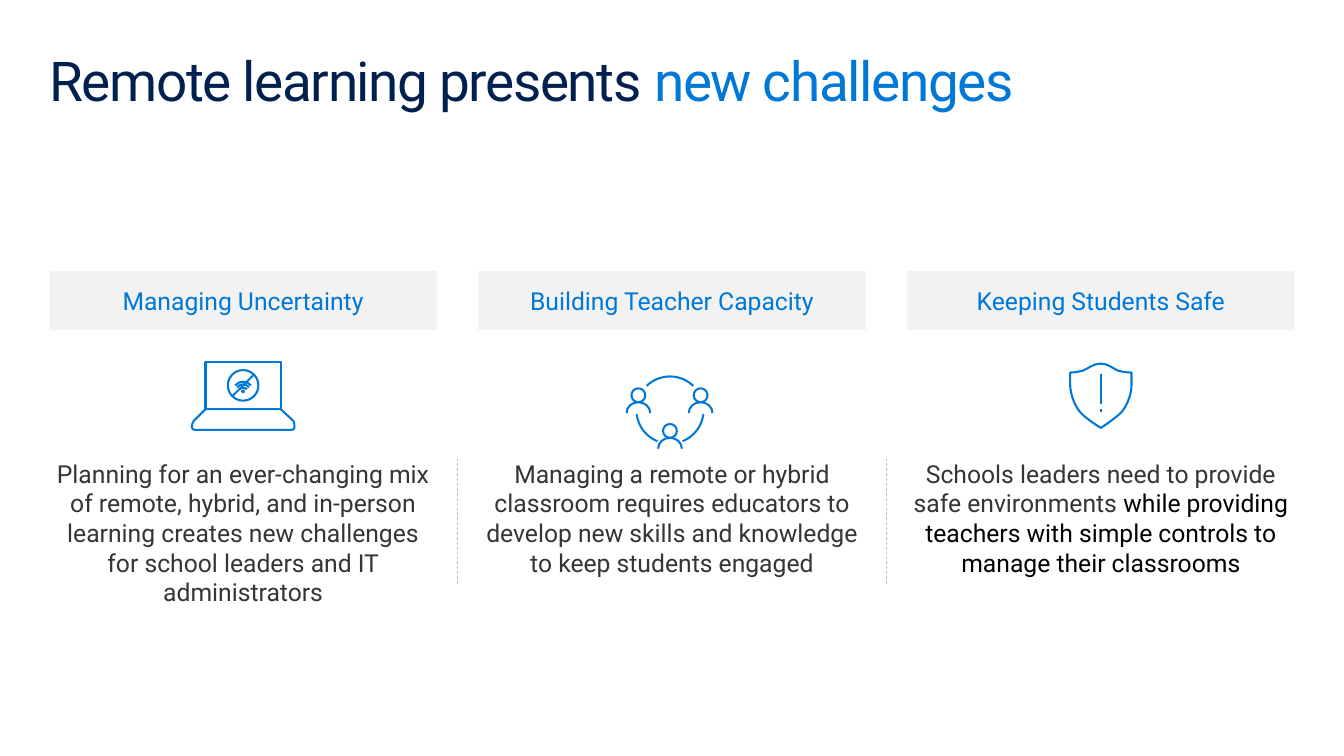
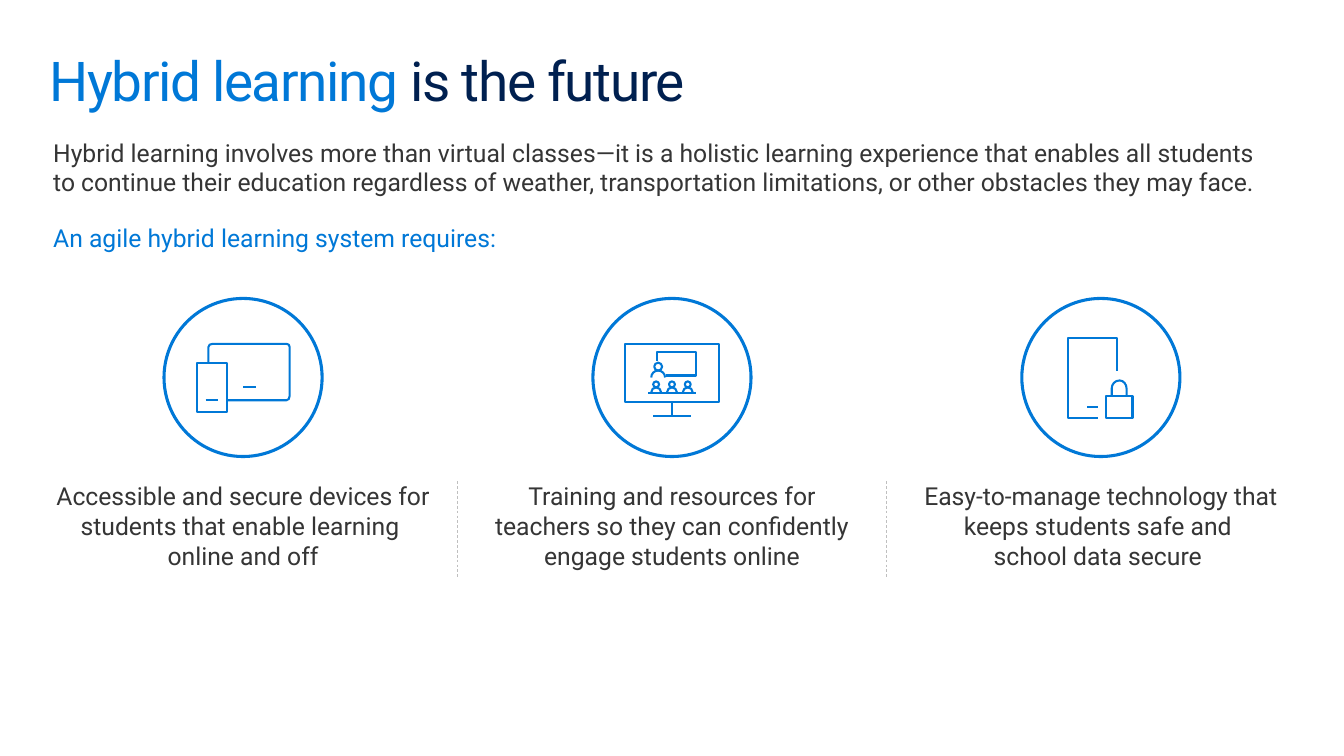
from dataclasses import dataclass
from itertools import islice
from math import cos, radians, sin, tan
from typing import Any

from lxml.etree import SubElement
from pptx import Presentation
from pptx.dml.color import RGBColor
from pptx.enum.dml import MSO_LINE
from pptx.enum.shapes import MSO_CONNECTOR, MSO_SHAPE
from pptx.enum.text import MSO_ANCHOR, PP_ALIGN
from pptx.oxml.ns import qn
from pptx.shapes.base import BaseShape
from pptx.slide import Slide
from pptx.text.text import TextFrame
from pptx.util import Inches, Pt

COLORS = {
    "navy": "002050",
    "blue": "0078D7",
    "text": "353535",
    "black": "000000",
    "band": "F2F2F2",
    "divider": "BFBFBF",
}
FONT = "Roboto"
LEFT, FULL_WIDTH = 0.5, 12.6
COLUMN_COUNT, COLUMN_WIDTH, COLUMN_GAP = 3, 3.92, 0.42
COLUMNS = [LEFT + i * (COLUMN_WIDTH + COLUMN_GAP) for i in range(COLUMN_COUNT)]
CENTERS = [left + COLUMN_WIDTH / 2 for left in COLUMNS]

NO_INSET = {"margin_left": 0, "margin_top": 0, "margin_right": 0, "margin_bottom": 0}
TITLE_PARAGRAPH = {"line_spacing": 0.9}
CENTERED = {"alignment": PP_ALIGN.CENTER}
CENTERED_SPACED = {"alignment": PP_ALIGN.CENTER, "space_after": Pt(6)}

Point = tuple[float, float]
Segment = tuple[float, ...]


@dataclass(frozen=True)
class Span:
    text: str
    color: str = "text"
    break_after: bool = False


@dataclass(frozen=True)
class Challenge:
    heading: str
    description: list[Span]


@dataclass(frozen=True)
class Stroke:
    segments: list[Segment]
    closed: bool = False


@dataclass(frozen=True)
class Person:
    x: float
    y: float
    head: float
    shoulder_width: float
    shoulder_height: float


CHALLENGES = [
    Challenge("Managing Uncertainty", [Span(
        "Planning for an ever-changing mix of remote, hybrid, and in-person learning "
        "creates new challenges for school leaders and IT administrators")]),
    Challenge("Building Teacher Capacity", [Span(
        "Managing a remote or hybrid classroom requires educators to develop new skills "
        "and knowledge to keep students engaged")]),
    Challenge("Keeping Students Safe", [
        Span("Schools leaders need to provide safe environments "),
        Span("while providing teachers with simple controls to manage their classrooms", "black")]),
]
REQUIREMENTS = [
    [Span("Accessible and secure devices for students that enable learning ", break_after=True),
     Span("online and off")],
    [Span("Training and resources for teachers so they can confidently engage students online")],
    [Span("Easy-to-manage technology that keeps students safe and ", break_after=True),
     Span("school data secure ")],
]
TEAM = [Person(x, y, 0.07, 0.12, 0.11) for x, y in [(6.46, 4.0), (7.09, 4.0), (6.78, 4.36)]]
TEACHER = Person(6.66, 3.71, 0.04, 0.07, 0.07)
STUDENTS = [Person(6.64 + 0.16 * i, 3.89, 0.03, 0.05, 0.05) for i in range(3)]


def apply_format(target: Any, values: dict[str, Any]) -> None:
    for name, value in values.items():
        setattr(target, name, value)


def rgb(color: str) -> RGBColor:
    return RGBColor.from_string(COLORS[color])


def write(frame: TextFrame, spans: list[Span], paragraph_format: dict[str, Any],
          size: float = 18, spacing: int = 0) -> None:
    frame.word_wrap = True
    paragraph = frame.paragraphs[0]
    apply_format(paragraph, paragraph_format)
    for span in spans:
        run = paragraph.add_run()
        run.text = span.text
        apply_format(run.font, {"name": FONT, "size": Pt(size)})
        run.font.color.rgb = rgb(span.color)
        if spacing:
            run.font._element.set("spc", str(spacing))
        if span.break_after:
            paragraph.add_line_break()


def add_text(slide: Slide, left: float, top: float, width: float, height: float,
             spans: list[Span], paragraph_format: dict[str, Any],
             frame_format: dict[str, Any], size: float = 18, spacing: int = 0) -> None:
    box = slide.shapes.add_textbox(Inches(left), Inches(top), Inches(width), Inches(height))
    apply_format(box.text_frame, frame_format)
    write(box.text_frame, spans, paragraph_format, size, spacing)


def add_title(slide: Slide, spans: list[Span]) -> None:
    add_text(slide, LEFT, 0.55, FULL_WIDTH, 0.8, spans, TITLE_PARAGRAPH, NO_INSET, 40, -100)


def add_column_text(slide: Slide, left: float, top: float, height: float,
                    spans: list[Span], paragraph_format: dict[str, Any]) -> None:
    add_text(slide, left, top, COLUMN_WIDTH, height, spans, paragraph_format, NO_INSET)


def add_line(slide: Slide, start: Point, end: Point, color: str, width: float,
             dash: MSO_LINE | None = None) -> None:
    line = slide.shapes.add_connector(
        MSO_CONNECTOR.STRAIGHT, *(Inches(value) for value in (*start, *end)))
    line.line.color.rgb = rgb(color)
    apply_format(line.line, {"width": Pt(width), "dash_style": dash})
    SubElement(line._element.spPr, qn("a:effectLst"))


def add_dividers(slide: Slide, top: float, bottom: float) -> None:
    for left in COLUMNS[1:]:
        x = left - COLUMN_GAP / 2
        add_line(slide, (x, top), (x, bottom), "divider", 0.5, MSO_LINE.DASH)


def outline(shape: BaseShape, width: float) -> None:
    shape.shadow.inherit = False
    shape.fill.background()
    shape.line.color.rgb = rgb("blue")
    shape.line.width = Pt(width)


def add_ring(slide: Slide, x: float, y: float, radius: float, width: float) -> None:
    ring = slide.shapes.add_shape(
        MSO_SHAPE.OVAL, Inches(x - radius), Inches(y - radius),
        Inches(2 * radius), Inches(2 * radius))
    outline(ring, width)


def add_heading(slide: Slide, left: float, heading: str) -> None:
    band = slide.shapes.add_shape(
        MSO_SHAPE.RECTANGLE, Inches(left), Inches(2.74), Inches(COLUMN_WIDTH), Inches(0.6))
    band.shadow.inherit = False
    band.fill.solid()
    band.fill.fore_color.rgb = rgb("band")
    band.line.fill.background()
    band.text_frame.vertical_anchor = MSO_ANCHOR.MIDDLE
    write(band.text_frame, [Span(heading, "blue")], CENTERED)


def arc(x: float, y: float, rx: float, ry: float, start: float, end: float,
        parts: int = 1) -> list[Segment]:
    step = radians(end - start) / parts
    reach = 4 / 3 * tan(step / 4)
    segments: list[Segment] = [(x + rx * cos(radians(start)), y - ry * sin(radians(start)))]
    for i in range(parts):
        a = radians(start) + i * step
        b = a + step
        segments.append((
            x + rx * (cos(a) - reach * sin(a)), y - ry * (sin(a) + reach * cos(a)),
            x + rx * (cos(b) + reach * sin(b)), y - ry * (sin(b) - reach * cos(b)),
            x + rx * cos(b), y - ry * sin(b)))
    return segments


def box_stroke(left: float, top: float, right: float, bottom: float) -> Stroke:
    return Stroke([(left, top), (right, top), (right, bottom), (left, bottom)], True)


def person_strokes(person: Person) -> list[Stroke]:
    feet = person.y + person.head + person.shoulder_height
    return [
        Stroke(arc(person.x, person.y, person.head, person.head, 0, 360, 4), True),
        Stroke(arc(person.x, feet, person.shoulder_width, person.shoulder_height, 0, 180, 2)),
    ]


def segment_points(segment: Segment) -> list[tuple[int, int]]:
    return [(Inches(x), Inches(y)) for x, y in zip(segment[::2], segment[1::2])]


def add_icon(slide: Slide, strokes: list[Stroke]) -> None:
    builder = slide.shapes.build_freeform(*segment_points(strokes[0].segments[0])[0])
    for index, stroke in enumerate(strokes):
        if index:
            builder.move_to(*segment_points(stroke.segments[0])[0])
        points = [point for segment in stroke.segments[1:] for point in segment_points(segment)]
        builder.add_line_segments(points, close=stroke.closed)
    icon = builder.convert_to_shape()
    outline(icon, 1.5)
    steps = iter(list(icon._element.iter(qn("a:lnTo"))))
    for segment in (segment for stroke in strokes for segment in stroke.segments[1:]):
        first, *others = islice(steps, len(segment) // 2)
        if others:
            first.tag = qn("a:cubicBezTo")
        for other in others:
            first.append(other[0])
            other.getparent().remove(other)


def add_people(slide: Slide, people: list[Person]) -> None:
    for person in people:
        add_icon(slide, person_strokes(person))


def add_offline_laptop(slide: Slide) -> None:
    x = CENTERS[0]
    add_icon(slide, [
        box_stroke(2.08, 3.66, 2.84, 4.14),
        Stroke([(1.94, 4.32), (1.94, 4.34, 1.96, 4.35, 1.97, 4.35), (2.95, 4.35),
                (2.97, 4.35, 2.98, 4.34, 2.98, 4.32), (2.98, 4.3, 2.98, 4.28, 2.97, 4.26),
                (2.84, 4.14), (2.08, 4.14), (1.96, 4.26),
                (1.95, 4.28, 1.94, 4.3, 1.94, 4.32)], True),
    ])
    add_ring(slide, x, 3.9, 0.155, 1.5)
    add_line(slide, (2.57, 3.79), (2.35, 4.01), "blue", 1.5)
    waves = [(0.04, 3.94, 3.92), (0.06, 3.92, 3.88), (0.08, 3.9, 3.85)]
    add_icon(slide, [Stroke(arc(x, 3.96, 0.01, 0.01, 0, 360, 4), True)] + [
        Stroke([(x + half, end), (x + half / 2, peak, x - half / 2, peak, x - half, end)])
        for half, end, peak in waves])


def add_team(slide: Slide) -> None:
    add_people(slide, TEAM)
    for start, end, parts in [(46, 134, 2), (187, 248, 1), (292, 353, 1)]:
        add_icon(slide, [Stroke(arc(6.78, 4.15, 0.34, 0.34, start, end, parts))])


def add_shield(slide: Slide) -> None:
    x = CENTERS[2]
    add_icon(slide, [
        Stroke([(10.93, 4.17), (10.82, 4.03, 10.83, 3.88, 10.83, 3.88), (10.83, 3.77),
                (10.83, 3.77, 10.89, 3.77, 10.96, 3.75), (11.03, 3.72, 11.06, 3.68, x, 3.68),
                (11.21, 3.68, 11.25, 3.72, 11.31, 3.75),
                (11.38, 3.77, 11.45, 3.77, 11.45, 3.77), (11.45, 3.88),
                (11.45, 3.88, 11.46, 4.03, 11.35, 4.17),
                (11.28, 4.24, x, 4.33, x, 4.33), (x, 4.33, 10.99, 4.24, 10.93, 4.17)], True),
        Stroke([(x, 3.78), (x, 4.09)]),
        Stroke([(x, 4.14), (x, 4.17)]),
    ])


def add_devices(slide: Slide) -> None:
    add_icon(slide, [
        box_stroke(1.99, 3.67, 2.3, 4.17),
        Stroke([(2.08, 4.05), (2.21, 4.05)]),
        Stroke([(2.46, 3.92), (2.59, 3.92)]),
        Stroke([(2.3, 4.05), (2.9, 4.05), (2.92, 4.05, 2.93, 4.03, 2.93, 4.01), (2.93, 3.51),
                (2.93, 3.49, 2.92, 3.48, 2.9, 3.48), (2.15, 3.48),
                (2.13, 3.48, 2.11, 3.49, 2.11, 3.51), (2.11, 3.67)]),
    ])


def add_online_class(slide: Slide) -> None:
    x = CENTERS[1]
    for person in (TEACHER, *STUDENTS):
        for stroke in person_strokes(person):
            add_icon(slide, [stroke])
    add_icon(slide, [Stroke([(6.65, 3.65), (6.65, 3.56), (7.04, 3.56), (7.04, 3.8), (6.74, 3.8)])])
    add_icon(slide, [Stroke([(6.56, 3.98), (7.04, 3.98)])])
    add_icon(slide, [
        box_stroke(6.32, 3.48, 7.28, 4.07),
        Stroke([(x, 4.07), (x, 4.21)]),
        Stroke([(6.61, 4.21), (6.99, 4.21)]),
    ])


def add_locked_tablet(slide: Slide) -> None:
    add_icon(slide, [
        Stroke([(11.11, 4.23), (10.81, 4.23), (10.81, 3.42), (11.3, 3.42), (11.3, 3.75)]),
        box_stroke(11.19, 4.01, 11.46, 4.23),
        Stroke([(11.4, 4.01), (11.4, 3.93), (11.4, 3.89, 11.37, 3.85, 11.33, 3.85),
                (11.28, 3.85, 11.25, 3.89, 11.25, 3.93), (11.25, 4.01)]),
        Stroke([(11, 4.12), (11.11, 4.12)]),
    ])


def build_challenges(slide: Slide) -> None:
    add_title(slide, [Span("Remote learning presents ", "navy"), Span("new challenges", "blue")])
    for left, challenge in zip(COLUMNS, CHALLENGES):
        add_heading(slide, left, challenge.heading)
        add_column_text(slide, left, 4.64, 1.28, challenge.description, CENTERED)
    add_dividers(slide, 4.64, 5.92)
    for add_symbol in (add_team, add_shield, add_offline_laptop):
        add_symbol(slide)


def build_future(slide: Slide) -> None:
    add_title(slide, [Span("Hybrid learning", "blue"), Span(" is the future", "navy")])
    add_text(slide, 0.44, 1.34, FULL_WIDTH, 0.71, [Span(
        "Hybrid learning involves more than virtual classes—it is a holistic learning "
        "experience that enables all students to continue their education regardless of "
        "weather, transportation limitations, or other obstacles they may face.")], {}, {})
    add_text(slide, 0.44, 2.21, FULL_WIDTH, 0.4,
             [Span("An agile hybrid learning system requires:", "blue")], {}, {})
    for left, center, requirement in zip(COLUMNS, CENTERS, REQUIREMENTS):
        add_column_text(slide, left, 4.87, 0.91, requirement, CENTERED_SPACED)
        add_ring(slide, center, 3.82, 0.8, 2.25)
    add_dividers(slide, 4.87, 5.85)
    for add_symbol in (add_devices, add_online_class, add_locked_tablet):
        add_symbol(slide)


def main() -> None:
    deck = Presentation()
    apply_format(deck, {"slide_width": Inches(13.6), "slide_height": Inches(7.65)})
    for build in (build_challenges, build_future):
        build(deck.slides.add_slide(deck.slide_layouts[6]))
    deck.save("out.pptx")


if __name__ == "__main__":
    main()
